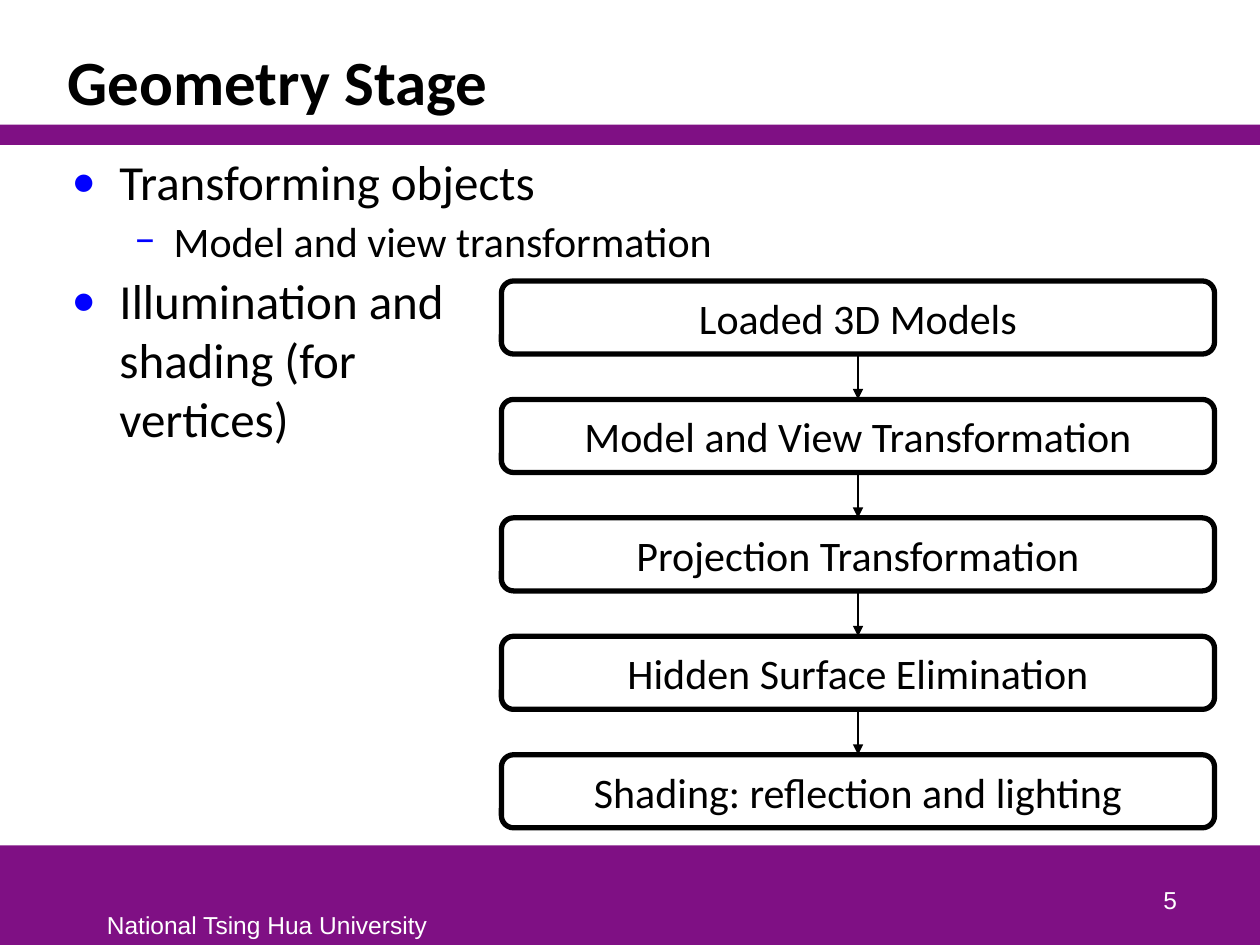
from lxml import etree
from pptx import Presentation
from pptx.dml.color import RGBColor
from pptx.enum.shapes import MSO_CONNECTOR, MSO_SHAPE
from pptx.enum.text import MSO_ANCHOR, PP_ALIGN
from pptx.oxml.ns import qn
from pptx.util import Inches, Pt

RECT, ROUNDED = MSO_SHAPE.RECTANGLE, MSO_SHAPE.ROUNDED_RECTANGLE
STRAIGHT = MSO_CONNECTOR.STRAIGHT
TOP, MIDDLE, BOTTOM = MSO_ANCHOR.TOP, MSO_ANCHOR.MIDDLE, MSO_ANCHOR.BOTTOM
LEFT, CENTER, RIGHT = PP_ALIGN.LEFT, PP_ALIGN.CENTER, PP_ALIGN.RIGHT

PURPLE, BLACK, WHITE, BLUE = "7F1084", "000000", "FFFFFF", "0000FF"

TITLE = "Geometry Stage"
BULLETS = [
    (0, "Transforming objects"),
    (1, "Model and view transformation"),
    (0, "Illumination and\vshading (for\vvertices)"),
]
STAGES = [
    "Loaded 3D Models",
    "Model and View Transformation",
    "Projection Transformation",
    "Hidden Surface Elimination",
    "Shading: reflection and lighting",
]
BANDS = [(0, 6.71, 10, 0.79), (0, 0.99, 10, 0.16)]
LEVELS = [
    {"size": 28, "char": "•", "left": 0.38, "hanging": 0.38},
    {"size": 24, "char": "−", "left": 0.81, "hanging": 0.31},
]
TITLE_FONT = {"name": "Calibri", "size": Pt(36), "bold": True}
STAGE_FONT = {"name": "Calibri", "size": Pt(24)}
FOOTER_FONT = {"name": "Arial", "size": Pt(14)}

STAGE_LEFT, STAGE_TOP, STAGE_W, STAGE_H = 3.98, 2.23, 5.66, 0.58
STAGE_PITCH = 0.94


def rgb(value):
    return RGBColor.from_string(value)


def write(p, text, font, color, align=LEFT):
    p.text = text
    p.alignment = align
    for r in p.runs:
        for key, value in font.items():
            setattr(r.font, key, value)
        r.font.color.rgb = rgb(color)


def add_text_box(s, box, anchor=TOP, wrap=True):
    tf = s.shapes.add_textbox(*map(Inches, box)).text_frame
    tf.word_wrap = wrap
    tf.vertical_anchor = anchor
    return tf


def add_bullet(p, level):
    pPr = p._p.get_or_add_pPr()
    pPr.set("marL", str(Inches(level["left"])))
    pPr.set("indent", str(-Inches(level["hanging"])))
    color = etree.SubElement(pPr, qn("a:buClr"))
    etree.SubElement(color, qn("a:srgbClr"), val=BLUE)
    etree.SubElement(pPr, qn("a:buFont"), typeface="Calibri")
    etree.SubElement(pPr, qn("a:buChar"), char=level["char"])


def add_band(s, box):
    sp = s.shapes.add_shape(RECT, *map(Inches, box))
    sp.shadow.inherit = False
    sp.fill.solid()
    sp.fill.fore_color.rgb = rgb(PURPLE)
    sp.line.fill.background()


def add_stage(s, text, top):
    box = (STAGE_LEFT, top, STAGE_W, STAGE_H)
    sp = s.shapes.add_shape(ROUNDED, *map(Inches, box))
    sp.shadow.inherit = False
    sp.fill.background()
    sp.line.color.rgb = rgb(BLACK)
    sp.line.width = Pt(3)
    tf = sp.text_frame
    tf.word_wrap = False
    tf.vertical_anchor = MIDDLE
    write(tf.paragraphs[0], text, STAGE_FONT, BLACK, CENTER)


def add_down_arrow(s, x, top, bottom):
    arrow = s.shapes.add_connector(STRAIGHT, *map(Inches, (x, top, x, bottom)))
    arrow.line.color.rgb = rgb(BLACK)
    arrow.line.width = Pt(0.75)
    etree.SubElement(arrow.line._get_or_add_ln(), qn("a:tailEnd"), type="triangle")
    etree.SubElement(arrow._element.spPr, qn("a:effectLst"))


def main():
    prs = Presentation()
    prs.slide_width, prs.slide_height = Inches(10), Inches(7.5)
    s = prs.slides.add_slide(prs.slide_layouts[6])

    for band in BANDS:
        add_band(s, band)
    tf = add_text_box(s, (0.75, 7.17, 2.76, 0.33), wrap=False)
    write(tf.paragraphs[0], "National Tsing Hua University", FOOTER_FONT, WHITE)
    tf = add_text_box(s, (7.36, 6.81, 2.08, 0.5), BOTTOM)
    write(tf.paragraphs[0], "5", FOOTER_FONT, WHITE, RIGHT)

    tf = add_text_box(s, (0.44, 0.25, 8.97, 0.74), BOTTOM)
    write(tf.paragraphs[0], TITLE, TITLE_FONT, BLACK)
    tf.paragraphs[0].line_spacing = 0.85

    tf = add_text_box(s, (0.47, 1.15, 8.94, 5.47))
    for i, (depth, text) in enumerate(BULLETS):
        p = tf.add_paragraph() if i else tf.paragraphs[0]
        level = LEVELS[depth]
        p.level = depth
        add_bullet(p, level)
        if i:
            p.space_before = Pt(3)
        write(p, text, {"name": "Calibri", "size": Pt(level["size"])}, BLACK)

    for i, stage in enumerate(STAGES):
        top = STAGE_TOP + i * STAGE_PITCH
        add_stage(s, stage, top)
        if i:
            previous_bottom = top - STAGE_PITCH + STAGE_H
            add_down_arrow(s, STAGE_LEFT + STAGE_W / 2, previous_bottom, top)

    prs.save("out.pptx")


if __name__ == "__main__":
    main()
